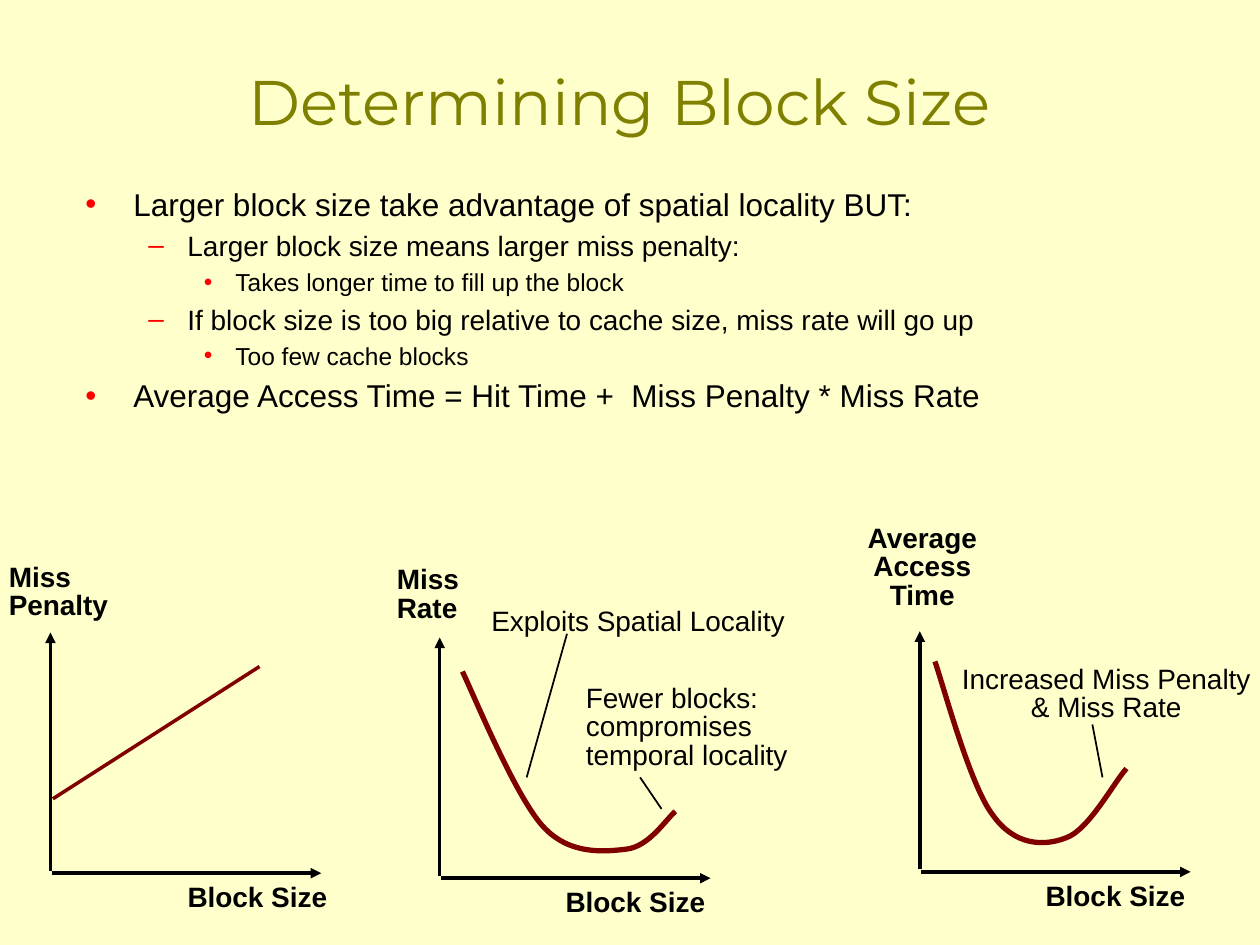
from dataclasses import dataclass

from lxml import etree
from pptx import Presentation
from pptx.dml.color import RGBColor
from pptx.enum.shapes import MSO_CONNECTOR
from pptx.enum.text import MSO_ANCHOR, MSO_AUTO_SIZE, PP_ALIGN
from pptx.oxml.ns import qn
from pptx.util import Inches, Pt

LEFT, CENTER = PP_ALIGN.LEFT, PP_ALIGN.CENTER
TOP, MIDDLE = MSO_ANCHOR.TOP, MSO_ANCHOR.MIDDLE
FIT_SHAPE = MSO_AUTO_SIZE.SHAPE_TO_FIT_TEXT
STRAIGHT = MSO_CONNECTOR.STRAIGHT

Point = tuple[float, float]
Box = tuple[float, float, float, float]


@dataclass(frozen=True)
class Theme:
    background: str = "FFFFCC"
    ink: str = "000000"
    title: str = "808000"
    bullet: str = "FF0000"
    curve: str = "800000"
    title_font: str = "Montserrat"
    body_font: str = "Arial"
    title_size: int = 36
    label_size: int = 16
    level_sizes: tuple[int, ...] = (18, 16, 14)
    axis_width: float = 2
    leader_width: float = 1
    curve_width: float = 3


@dataclass(frozen=True)
class Label:
    text: str
    box: Box
    bold: bool = False
    align: PP_ALIGN = LEFT
    insets: Point = (0.07, 0.03)
    line_spacing: float = 0.85


@dataclass(frozen=True)
class Graph:
    origin: Point
    y_label: Label
    block_size_left: float


@dataclass(frozen=True)
class BulletLevel:
    mark: str
    margin: float
    hanging: float


THEME = Theme()
AXIS_HEIGHT, AXIS_LENGTH = 1.89, 2.14

BULLET_LEVELS = (
    BulletLevel("•", 0.38, 0.38),
    BulletLevel("–", 0.81, 0.31),
    BulletLevel("•", 1.19, 0.25),
)
BULLETS = (
    (0, "Larger block size take advantage of spatial locality BUT:"),
    (1, "Larger block size means larger miss penalty:"),
    (2, "Takes longer time to fill up the block"),
    (1, "If block size is too big relative to cache size, miss rate will go up"),
    (2, "Too few cache blocks"),
    (0, "Average Access Time = Hit Time +  Miss Penalty * Miss Rate"),
)
GRAPHS = (
    Graph((0.4, 6.91), Label("Miss\nPenalty", (0, 4.45, 0.93, 0.51), True), 1.39),
    Graph((3.49, 6.95), Label("Miss\nRate", (3.08, 4.47, 0.66, 0.51), True), 4.39),
    Graph((7.3, 6.9), Label("Average\nAccess\nTime", (6.81, 4.14, 1.02, 0.74), True, CENTER), 8.2),
)
NOTES = (
    Label("Exploits Spatial Locality", (3.83, 4.8, 2.48, 0.28)),
    Label("Fewer blocks:\ncompromises\ntemporal locality", (4.58, 5.41, 1.77, 0.74)),
    Label("Increased Miss Penalty\n& Miss Rate", (7.56, 5.26, 2.44, 0.51), align=CENTER),
)
LEADERS = (
    ((4.5, 5.03), (4.18, 6.17)),
    ((5.08, 6.17), (5.25, 6.42)),
    ((8.67, 5.75), (8.75, 6.17)),
)
PENALTY_LINE = ((0.42, 6.34), (2.06, 5.29))
# Each curve: a start point, then two control points and an end point per segment
MISS_RATE_CURVE = (
    (3.67, 5.33), (3.77, 5.54), (4.09, 6.32), (4.31, 6.56), (4.52, 6.79),
    (4.8, 6.76), (4.97, 6.74), (5.15, 6.72), (5.28, 6.51), (5.36, 6.44),
)
ACCESS_TIME_CURVE = (
    (7.42, 5.25), (7.49, 5.45), (7.7, 6.24), (7.88, 6.47), (8.05, 6.71),
    (8.28, 6.72), (8.46, 6.65), (8.64, 6.59), (8.84, 6.21), (8.94, 6.1),
)


def add_frame(slide, box: Box, wrap: bool, anchor: MSO_ANCHOR = TOP):
    frame = slide.shapes.add_textbox(*map(Inches, box)).text_frame
    frame.word_wrap = wrap
    frame.vertical_anchor = anchor
    return frame


def add_run(paragraph, text: str, size: int, color: str = THEME.ink,
            font: str = THEME.body_font, bold: bool = False) -> None:
    run = paragraph.add_run()
    run.text = text
    run.font.name, run.font.size, run.font.bold = font, Pt(size), bold
    run.font.color.rgb = RGBColor.from_string(color)


def add_label(slide, label: Label) -> None:
    frame = add_frame(slide, label.box, wrap=False)
    frame.auto_size = FIT_SHAPE
    frame.margin_left = frame.margin_right = Inches(label.insets[0])
    frame.margin_top = frame.margin_bottom = Inches(label.insets[1])
    for index, line in enumerate(label.text.split("\n")):
        paragraph = frame.add_paragraph() if index else frame.paragraphs[0]
        paragraph.alignment = label.align
        paragraph.line_spacing = label.line_spacing
        add_run(paragraph, line, THEME.label_size, bold=label.bold)


def add_line(slide, start: Point, end: Point, color: str, width: float,
             arrow: bool = False) -> None:
    line = slide.shapes.add_connector(STRAIGHT, *map(Inches, start + end))
    line.line.color.rgb = RGBColor.from_string(color)
    line.line.width = Pt(width)
    if arrow:
        etree.SubElement(line.line._get_or_add_ln(), qn("a:tailEnd"), type="triangle")
    etree.SubElement(line._element.spPr, qn("a:effectLst"))


def add_curve(slide, points: tuple[Point, ...]) -> None:
    start, *rest = [(Inches(x), Inches(y)) for x, y in points]
    builder = slide.shapes.build_freeform(*start)
    builder.add_line_segments(rest, close=False)
    curve = builder.convert_to_shape()
    curve.shadow.inherit = False
    curve.fill.background()
    curve.line.color.rgb = RGBColor.from_string(THEME.curve)
    curve.line.width = Pt(THEME.curve_width)
    # Merge every three line segments into one cubic Bézier segment
    segments = list(curve._element.iter(qn("a:lnTo")))
    for index in range(0, len(segments), 3):
        bezier = etree.SubElement(segments[index].getparent(), qn("a:cubicBezTo"))
        for segment in segments[index:index + 3]:
            bezier.append(segment[0])
            segment.getparent().remove(segment)


def add_graph(slide, graph: Graph) -> None:
    x, y = graph.origin
    base = y + 0.02
    add_line(slide, (x, y), (x, y - AXIS_HEIGHT), THEME.ink, THEME.axis_width, arrow=True)
    add_line(slide, (x + 0.01, base), (x + 0.01 + AXIS_LENGTH, base),
             THEME.ink, THEME.axis_width, arrow=True)
    add_label(slide, graph.y_label)
    add_label(slide, Label("Block Size", (graph.block_size_left, base, 1.31, 0.36),
                           bold=True, insets=(0.1, 0.05), line_spacing=1.0))


def format_bullet(paragraph, level: BulletLevel) -> None:
    props = paragraph._p.get_or_add_pPr()
    props.set("marL", str(Inches(level.margin)))
    props.set("indent", str(-Inches(level.hanging)))
    spacing = etree.SubElement(props, qn("a:spcBef"))
    etree.SubElement(spacing, qn("a:spcPct"), val="20000")
    color = etree.SubElement(props, qn("a:buClr"))
    etree.SubElement(color, qn("a:srgbClr"), val=THEME.bullet)
    etree.SubElement(props, qn("a:buFont"), typeface=THEME.body_font)
    etree.SubElement(props, qn("a:buChar"), char=level.mark)


def main() -> None:
    deck = Presentation()
    deck.slide_width, deck.slide_height = Inches(10), Inches(7.5)
    slide = deck.slides.add_slide(deck.slide_layouts[6])
    slide.background.fill.solid()
    slide.background.fill.fore_color.rgb = RGBColor.from_string(THEME.background)

    # Title
    title = add_frame(slide, (0.58, 0.17, 8.67, 1.25), True, MIDDLE).paragraphs[0]
    title.alignment = CENTER
    add_run(title, "Determining Block Size", THEME.title_size, THEME.title, THEME.title_font)

    # Bulleted text
    body = add_frame(slide, (0.58, 1.42, 8.67, 2.79), True)
    for index, (level, text) in enumerate(BULLETS):
        paragraph = body.add_paragraph() if index else body.paragraphs[0]
        paragraph.level = level
        format_bullet(paragraph, BULLET_LEVELS[level])
        add_run(paragraph, text, THEME.level_sizes[level])

    # Graphs with their curves
    for graph in GRAPHS:
        add_graph(slide, graph)
    add_line(slide, *PENALTY_LINE, THEME.curve, THEME.axis_width)
    for points in (MISS_RATE_CURVE, ACCESS_TIME_CURVE):
        add_curve(slide, points)

    # Notes and their leader lines
    for note in NOTES:
        add_label(slide, note)
    for start, end in LEADERS:
        add_line(slide, start, end, THEME.ink, THEME.leader_width)

    deck.save("out.pptx")


if __name__ == "__main__":
    main()
